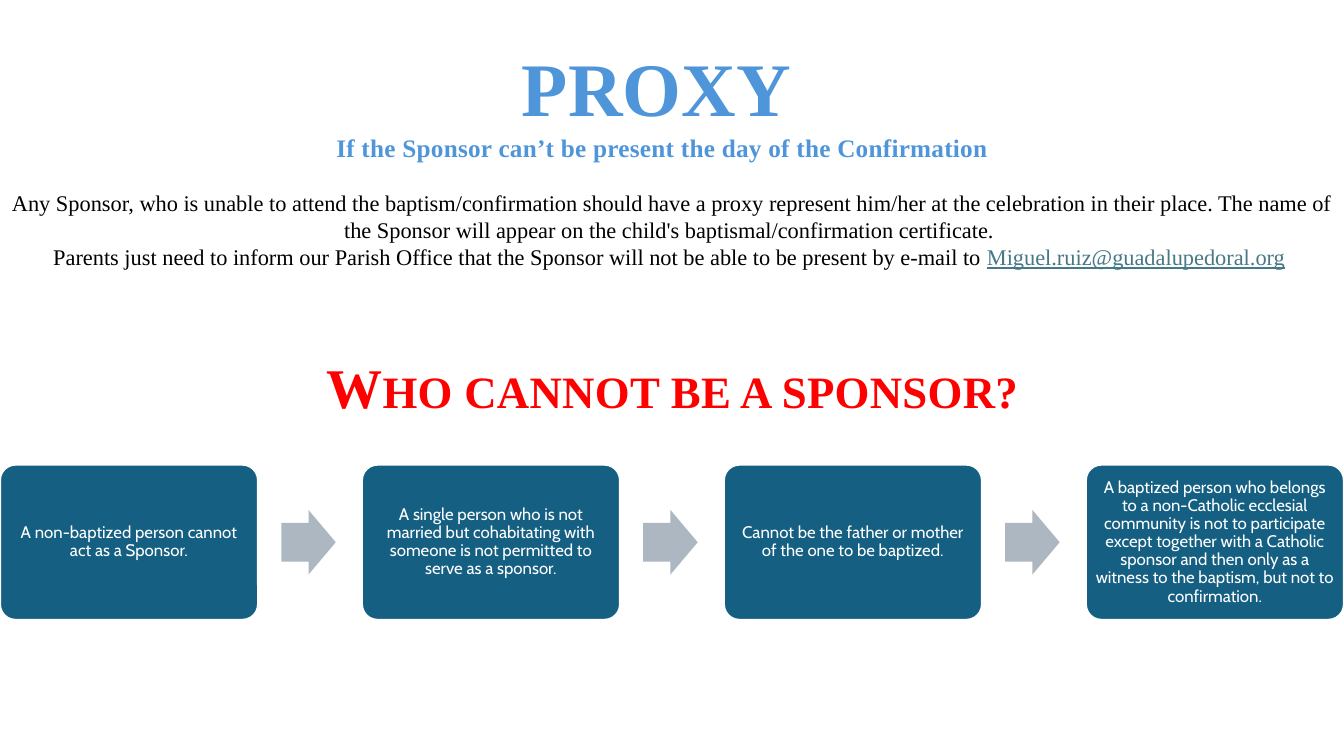
from pptx import Presentation
from pptx.dml.color import RGBColor
from pptx.enum.shapes import MSO_SHAPE
from pptx.enum.text import MSO_ANCHOR, MSO_AUTO_SIZE, PP_ALIGN
from pptx.util import Inches, Pt

SKY = RGBColor(0x4E, 0x95, 0xD9)
BLACK = RGBColor(0, 0, 0)
LINK = RGBColor(0x46, 0x78, 0x86)
RED = RGBColor(0xFF, 0, 0)
TEAL = RGBColor(0x15, 0x60, 0x82)
GRAY = RGBColor(0xAC, 0xB7, 0xC1)
WHITE = RGBColor(0xFF, 0xFF, 0xFF)

REASONS = [
    "A non-baptized person cannot act as a Sponsor.",
    "A single person who is not married but cohabitating with someone is not permitted to serve as a sponsor.",
    "Cannot be the father or mother of the one to be baptized.",
    "A baptized person who belongs to a non-Catholic ecclesial community is not to participate except together "
    "with a Catholic sponsor and then only as a witness to the baptism, but not to confirmation.",
]
CARD_PITCH = 3.59
ARROW_OFFSET = 2.79


class SponsorPage:
    heading_font = "Times New Roman"
    card_font = "Cabin"

    def __init__(self, deck):
        self.page = deck.slides.add_slide(deck.slide_layouts[5])

    def place(self, box, left, top, width, height):
        box.left, box.top = Inches(left), Inches(top)
        box.width, box.height = Inches(width), Inches(height)

    def fill_lines(self, frame, lines, color, bold=False):
        frame.word_wrap = True
        frame.auto_size = MSO_AUTO_SIZE.NONE
        frame.vertical_anchor = MSO_ANCHOR.TOP
        for index, line in enumerate(lines):
            para = frame.paragraphs[0] if index == 0 else frame.add_paragraph()
            para.alignment = PP_ALIGN.CENTER
            for text, size in line:
                span = para.add_run()
                span.text = text
                span.font.name = self.heading_font
                span.font.size = Pt(size)
                span.font.bold = bold
                span.font.color.rgb = color
                if bold:
                    span.font._element.set("spc", "20")

    def title(self, bounds, lines, color):
        box = self.page.shapes.title
        self.place(box, *bounds)
        self.fill_lines(box.text_frame, lines, color, bold=True)

    def text(self, bounds, lines, color, bold=False):
        box = self.page.shapes.add_textbox(*map(Inches, bounds))
        self.fill_lines(box.text_frame, lines, color, bold)
        return box

    def shape(self, kind, bounds, fill, adjustments):
        shape = self.page.shapes.add_shape(kind, *map(Inches, bounds))
        shape.shadow.inherit = False
        shape.fill.solid()
        shape.fill.fore_color.rgb = fill
        for index, value in enumerate(adjustments):
            shape.adjustments[index] = value
        return shape

    def card(self, left, text):
        card = self.shape(MSO_SHAPE.ROUNDED_RECTANGLE, (left, 4.61, 2.56, 1.54), TEAL, [0.1])
        card.line.color.rgb = WHITE
        card.line.width = Pt(1.5)
        frame = card.text_frame
        frame.word_wrap = True
        frame.vertical_anchor = MSO_ANCHOR.MIDDLE
        frame.margin_left = frame.margin_right = Inches(0.05)
        frame.margin_top = frame.margin_bottom = Inches(0.05)
        frame.text = text
        para = frame.paragraphs[0]
        para.alignment = PP_ALIGN.CENTER
        para.line_spacing = 0.9
        font = para.runs[0].font
        font.name = self.card_font
        font.size = Pt(12)
        font.color.rgb = WHITE

    def arrow(self, left):
        arrow = self.shape(MSO_SHAPE.RIGHT_ARROW, (left, 5.06, 0.54, 0.64), GRAY, [0.6, 0.5])
        arrow.line.fill.background()


def main():
    deck = Presentation()
    deck.slide_width, deck.slide_height = Inches(13.33), Inches(7.5)
    sponsor = SponsorPage(deck)

    sponsor.title((1.27, 0.36, 10.6, 1.31), [
        [("PROXY", 54), (" ", 32)],
        [("If the Sponsor can’t be present the day of the Confirmation", 18)],
    ], SKY)

    notice = sponsor.text((0, 1.83, 13.33, 0.91), [
        [("Any Sponsor, who is unable to attend the baptism/confirmation should have a proxy represent him/her "
          "at the celebration in their place. The name of the Sponsor will appear on the child's "
          "baptismal/confirmation certificate. ", 16)],
        [("Parents just need to inform our Parish Office that the Sponsor will not be able to be present "
          "by e-mail to ", 16), ("Miguel.ruiz@guadalupedoral.org", 16), (" ", 16)],
    ], BLACK)
    address = notice.text_frame.paragraphs[1].runs[1]
    address.font.color.rgb = LINK
    address.font.underline = True

    sponsor.text((1.37, 3.45, 10.6, 0.77),
                 [[("W", 40), ("HO CANNOT BE A SPONSOR?", 32)]], RED, bold=True)

    for index, reason in enumerate(REASONS):
        left = index * CARD_PITCH
        sponsor.card(left, reason)
        if index < len(REASONS) - 1:
            sponsor.arrow(left + ARROW_OFFSET)

    deck.save("out.pptx")


if __name__ == "__main__":
    main()
